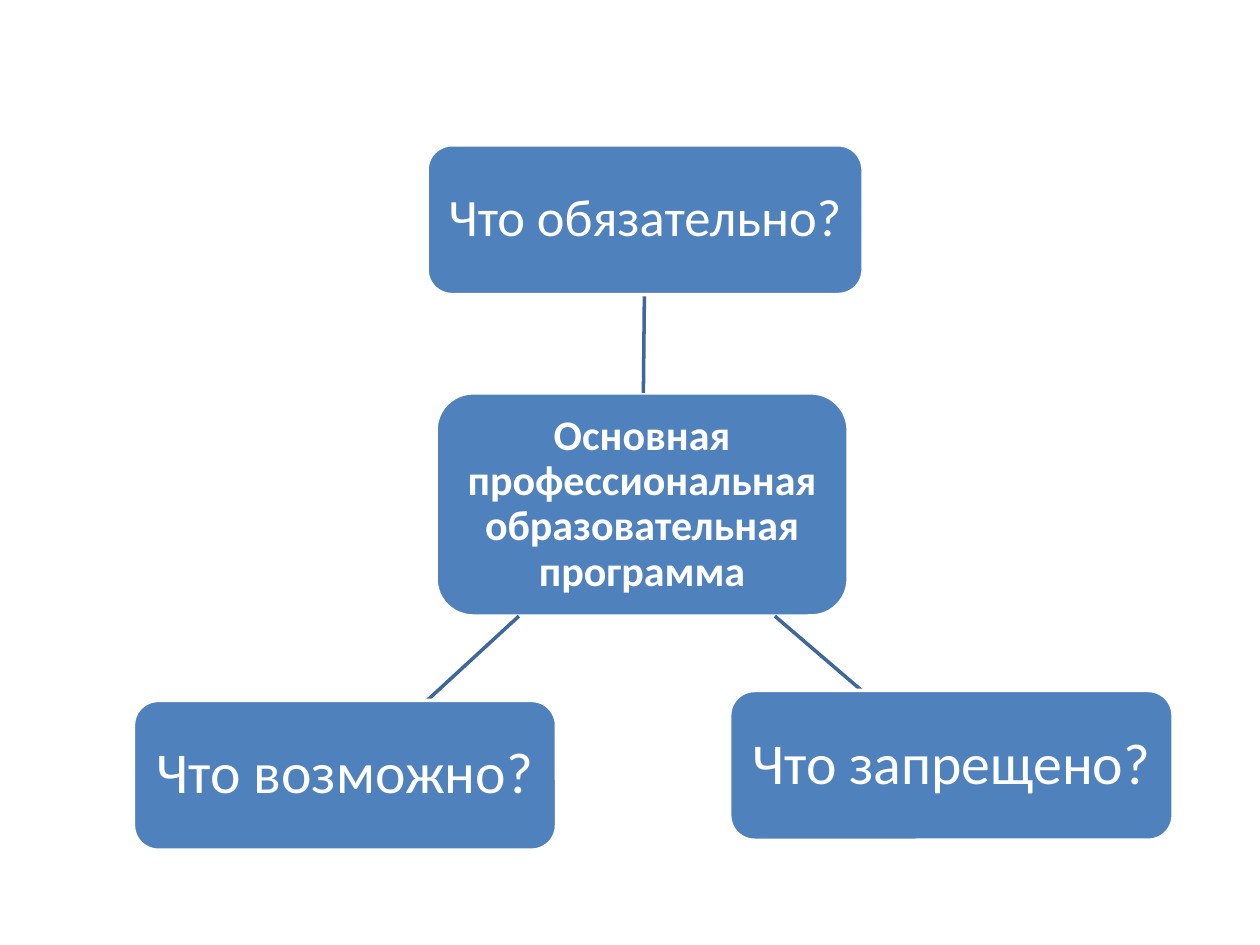
from pptx import Presentation
from pptx.dml.color import RGBColor
from pptx.enum.shapes import MSO_CONNECTOR, MSO_SHAPE
from pptx.enum.text import MSO_ANCHOR, PP_ALIGN
from pptx.oxml.ns import qn
from pptx.util import Cm, Pt
from lxml import etree

ROUNDED = MSO_SHAPE.ROUNDED_RECTANGLE
STRAIGHT = MSO_CONNECTOR.STRAIGHT
MIDDLE = MSO_ANCHOR.MIDDLE
CENTER = PP_ALIGN.CENTER
COLORS = {"box": "4F81BD", "white": "FFFFFF", "link": "3F6797"}


def rgb(name):
    return RGBColor.from_string(COLORS[name])


def add_box(s, text, x, y, w, h, size, inset, bold=False):
    sp = s.shapes.add_shape(ROUNDED, Cm(x), Cm(y), Cm(w), Cm(h))
    sp.shadow.inherit = False
    sp.fill.solid()
    sp.fill.fore_color.rgb = rgb("box")
    sp.line.color.rgb = rgb("white")
    sp.line.width = Pt(2)
    tf = sp.text_frame
    tf.word_wrap = True
    tf.vertical_anchor = MIDDLE
    tf.margin_left = tf.margin_right = Cm(inset)
    tf.margin_top = tf.margin_bottom = Cm(inset)
    p = tf.paragraphs[0]
    p.alignment = CENTER
    p.line_spacing = 0.9
    r = p.add_run()
    r.text = text
    r.font.name = "Calibri"
    r.font.size = Pt(size)
    r.font.bold = bold
    r.font.color.rgb = rgb("white")


prs = Presentation()
prs.slide_width, prs.slide_height = Cm(25.4), Cm(19.05)
s = prs.slides.add_slide(prs.slide_layouts[6])

# Central topic
add_box(s, "Основная профессиональная образовательная программа",
        8.79, 7.92, 8.31, 4.5, 24, 0.18, bold=True)

# Questions around it: text, left, top, width, size, inset, link ends
questions = [
    ("Что обязательно?", 8.61, 2.92, 8.79, 30, 0.2, (12.97, 7.92, 12.99, 5.94)),
    ("Что запрещено?", 14.71, 13.92, 8.94, 33, 0.22, (15.62, 12.42, 17.37, 13.92)),
    ("Что возможно?", 2.69, 14.12, 8.53, 33, 0.22, (10.46, 12.42, 8.61, 14.12)),
]
for text, x, y, w, size, inset, ends in questions:
    link = s.shapes.add_connector(STRAIGHT, *[Cm(v) for v in ends])
    link.line.color.rgb = rgb("link")
    link.line.width = Pt(2)
    etree.SubElement(link._element.spPr, qn("a:effectLst"))
    add_box(s, text, x, y, w, 3.02, size, inset)

prs.save("out.pptx")
